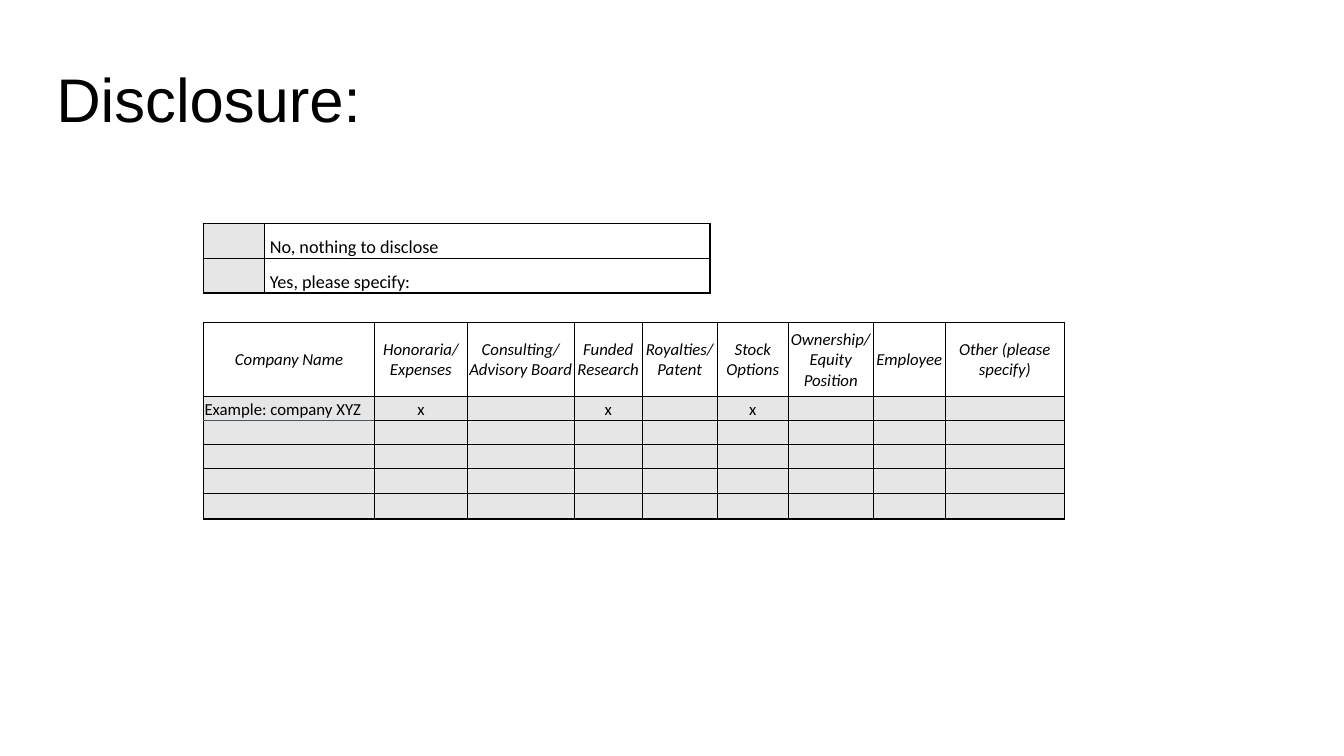
"""Build a disclosure slide with a yes/no box and a table of company interests."""
from lxml import etree
from pptx import Presentation
from pptx.dml.color import RGBColor
from pptx.enum import text
from pptx.oxml import ns
from pptx.util import Pt

BLACK = RGBColor(0x00, 0x00, 0x00)
GREY = RGBColor(0xE7, 0xE6, 0xE6)
SLATE = RGBColor(0x44, 0x54, 0x6A)
THIN, THICK = 0.5, 1
INSET = 0.72

ANSWERS = ["No, nothing to disclose", "Yes, please specify:"]
ANSWER_WIDTHS = [43.8, 318]
ANSWER_HEIGHTS = [24.8] * 2

HEADINGS = ["Company Name", "Honoraria/ Expenses", "Consulting/ Advisory Board",
            "Funded Research", "Royalties/ Patent", "Stock Options",
            "Ownership/ Equity Position", "Employee", "Other (please specify)"]
EXAMPLE = ["Example: company XYZ", "x", "", "x", "", "x", "", "", ""]
INTEREST_WIDTHS = [122.2, 66.2, 76.4, 48.6, 53.5, 51, 60.4, 51.8, 84.8]
INTEREST_HEIGHTS = [52.6, 17.2, 17.2, 17.2, 18.2, 18]


def add_title(s, words):
    sp = s.shapes.title
    sp.left, sp.top, sp.width, sp.height = Pt(33), Pt(21), Pt(828), Pt(104.4)
    tf = sp.text_frame
    tf.text = words
    tf.word_wrap = True
    tf.auto_size = text.MSO_AUTO_SIZE.NONE
    tf.vertical_anchor = text.MSO_ANCHOR.MIDDLE
    p = tf.paragraphs[0]
    p.alignment = text.PP_ALIGN.LEFT
    p.line_spacing = 0.9
    p.font.name, p.font.size, p.font.color.rgb = "Arial", Pt(44), BLACK


def add_grid(s, left, top, widths, heights):
    frame = s.shapes.add_table(len(heights), len(widths), Pt(left), Pt(top),
                               Pt(sum(widths)), Pt(sum(heights)))
    table = frame.table
    table.first_row = table.horz_banding = False
    for column, width in zip(table.columns, widths):
        column.width = Pt(width)
    for row, height in zip(table.rows, heights):
        row.height = Pt(height)
    return table


def set_border(cell, side, width, color=BLACK):
    tcPr = cell._tc.get_or_add_tcPr()
    ln = etree.SubElement(tcPr, ns.qn(f"a:ln{side}"), w=str(Pt(width)))
    fill = etree.SubElement(ln, ns.qn("a:solidFill"))
    etree.SubElement(fill, ns.qn("a:srgbClr"), val=str(color))


def format_cell(cell, words, size, fill=None, italic=False, indent=INSET,
                align=text.PP_ALIGN.LEFT, anchor=text.MSO_ANCHOR.BOTTOM):
    if fill is None:
        cell.fill.background()
    else:
        cell.fill.solid()
        cell.fill.fore_color.rgb = fill
    cell.margin_left, cell.margin_right = Pt(indent), Pt(INSET)
    cell.margin_top, cell.margin_bottom = Pt(INSET), Pt(0)
    cell.vertical_anchor = anchor
    cell.text = words
    p = cell.text_frame.paragraphs[0]
    p.alignment = align
    p.font.name, p.font.size, p.font.italic = "Calibri", Pt(size), italic
    p.font.color.rgb = BLACK


def add_answers(s):
    table = add_grid(s, 145.4, 159.8, ANSWER_WIDTHS, ANSWER_HEIGHTS)
    for r, answer in enumerate(ANSWERS):
        box, label = table.cell(r, 0), table.cell(r, 1)
        for cell in (box, label):
            for side in "LRTB":
                set_border(cell, side, THICK)
        format_cell(box, "", 13, GREY)
        format_cell(label, answer, 13, indent=3.6)


def add_interests(s):
    table = add_grid(s, 145.4, 230.4, INTEREST_WIDTHS, INTEREST_HEIGHTS)
    last_row, last_col = len(INTEREST_HEIGHTS) - 1, len(INTEREST_WIDTHS) - 1
    blank = [""] * len(HEADINGS)
    rows = [HEADINGS, EXAMPLE] + [blank] * (last_row - 1)
    for r, words in enumerate(rows):
        for c, word in enumerate(words):
            cell = table.cell(r, c)
            outer = {"L": c == 0, "R": c == last_col, "T": r == 0, "B": r == last_row}
            for side, is_outer in outer.items():
                under_example = c == 0 and (r, side) in ((1, "B"), (2, "T"))
                set_border(cell, side, THICK if is_outer else THIN,
                           SLATE if under_example else BLACK)
            if r == 0:
                format_cell(cell, word, 12, italic=True, align=text.PP_ALIGN.CENTER,
                            anchor=text.MSO_ANCHOR.MIDDLE)
            else:
                align = text.PP_ALIGN.LEFT if c == 0 else text.PP_ALIGN.CENTER
                format_cell(cell, word, 12, GREY, align=align)


def main():
    prs = Presentation()
    prs.slide_width, prs.slide_height = Pt(960), Pt(540)
    s = prs.slides.add_slide(prs.slide_layouts.get_by_name("Title Only"))
    add_title(s, "Disclosure:")
    add_interests(s)
    add_answers(s)
    prs.save("out.pptx")


if __name__ == "__main__":
    main()
